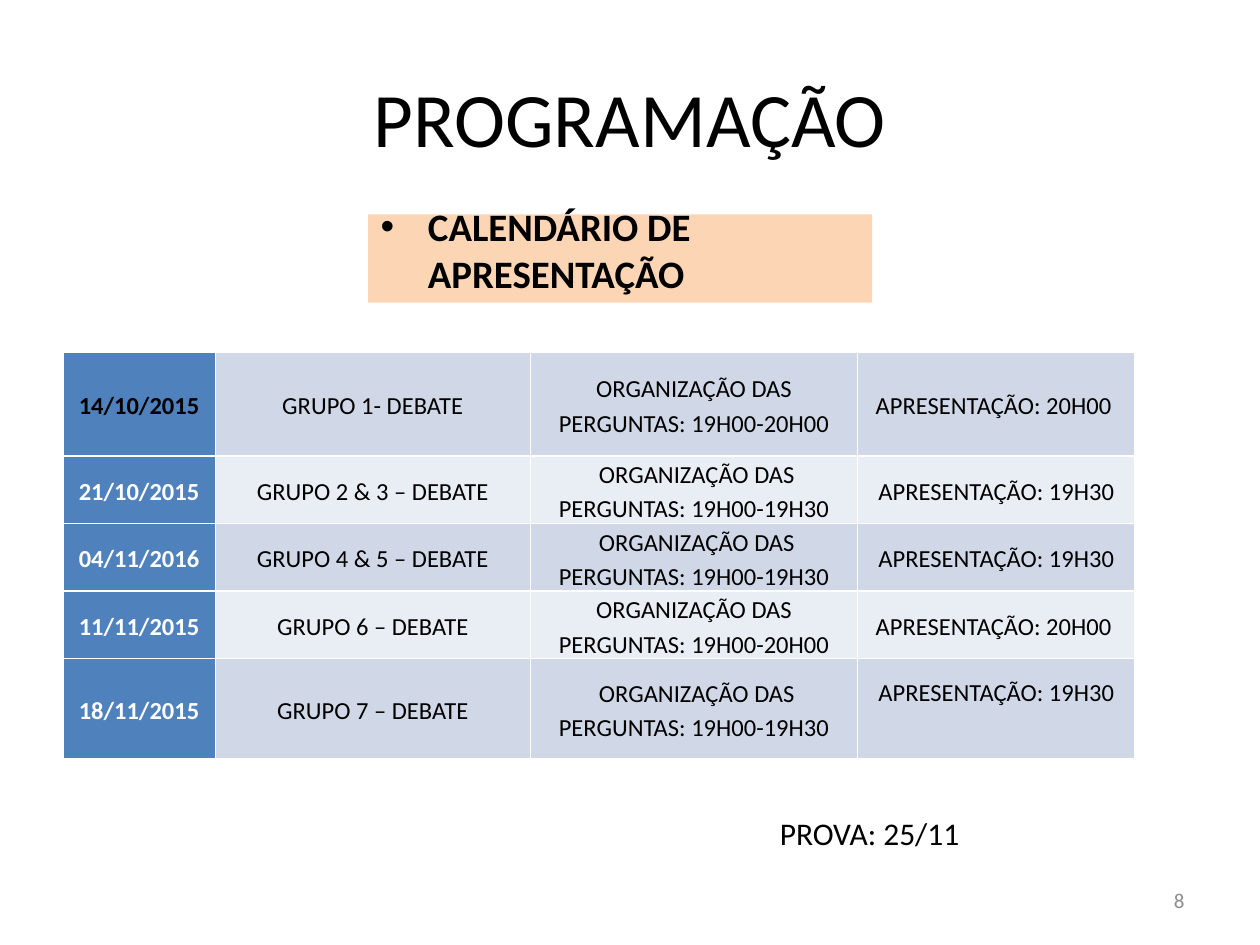
from dataclasses import dataclass
from lxml.etree import SubElement
from pptx import Presentation
from pptx.dml.color import RGBColor
from pptx.enum.text import MSO_ANCHOR, MSO_AUTO_SIZE, PP_ALIGN
from pptx.oxml.ns import qn
from pptx.util import Cm, Pt


@dataclass(frozen=True)
class Theme:
    face: str = "Calibri"
    ink: str = "000000"
    white: str = "FFFFFF"
    gray: str = "8C8C8C"
    peach: str = "FCD5B5"
    blue: str = "4F81BD"
    bands: tuple = ("D0D8E8", "E9EDF4")
    title: float = 44
    head: float = 22.2
    exam: float = 18
    cell: float = 14
    page: float = 12


THEME = Theme()
WIDTHS = (3.07, 6.35, 6.6, 5.59)
HEIGHTS = (2.08, 1.32, 1.32, 1.32, 2.01)
ROWS = (
    ("14/10/2015", "GRUPO 1- DEBATE",
     "ORGANIZAÇÃO DAS PERGUNTAS: 19H00-20H00", "APRESENTAÇÃO: 20H00 "),
    ("21/10/2015", "GRUPO 2 & 3 – DEBATE",
     " ORGANIZAÇÃO DAS PERGUNTAS: 19H00-19H30", "APRESENTAÇÃO: 19H30"),
    ("04/11/2016", "GRUPO 4 & 5 – DEBATE",
     " ORGANIZAÇÃO DAS PERGUNTAS: 19H00-19H30", "APRESENTAÇÃO: 19H30"),
    ("11/11/2015", "GRUPO 6 – DEBATE",
     "ORGANIZAÇÃO DAS PERGUNTAS: 19H00-20H00", "APRESENTAÇÃO: 20H00 "),
    ("18/11/2015", "GRUPO 7 – DEBATE",
     " ORGANIZAÇÃO DAS PERGUNTAS: 19H00-19H30", "APRESENTAÇÃO: 19H30"),
)


def paint(fill, color):
    fill.solid()
    fill.fore_color.rgb = RGBColor.from_string(color)


def write(frame, text, size, color=THEME.ink, bold=False, align=PP_ALIGN.LEFT):
    frame.text = text
    para = frame.paragraphs[0]
    para.alignment = align
    font = para.font
    font.name, font.size, font.bold = THEME.face, Pt(size), bold
    font.color.rgb = RGBColor.from_string(color)
    return para


def place(shape, box):
    shape.left, shape.top, shape.width, shape.height = map(Cm, box)


def add_title(slide, box):
    title = slide.shapes.title
    place(title, box)
    title.text_frame.vertical_anchor = MSO_ANCHOR.MIDDLE
    write(title.text_frame, "PROGRAMAÇÃO", THEME.title, align=PP_ALIGN.CENTER)


def add_head(slide, box):
    head = slide.placeholders[1]
    place(head, box)
    paint(head.fill, THEME.peach)
    frame = head.text_frame
    frame.auto_size = MSO_AUTO_SIZE.NONE
    frame.vertical_anchor = MSO_ANCHOR.BOTTOM
    frame.text = ""
    # No bullet and no hanging indent
    props = frame.paragraphs[0]._p.get_or_add_pPr()
    props.set("marL", "0")
    props.set("indent", "0")
    SubElement(props, qn("a:buNone"))
    para = write(frame, "CALENDÁRIO DE APRESENTAÇÃO", THEME.head, bold=True)
    para.space_before = Pt(0)


def add_note(slide, box, text, size, wrap=True, **style):
    note = slide.shapes.add_textbox(*map(Cm, box))
    note.text_frame.word_wrap = wrap
    write(note.text_frame, text, size, **style)
    return note.text_frame


def rule_cell(cell):
    props = cell._tc.get_or_add_tcPr()
    for side in ("lnL", "lnR", "lnT", "lnB"):
        line = SubElement(props, qn(f"a:{side}"), w=str(Pt(1)))
        fill = SubElement(line, qn("a:solidFill"))
        SubElement(fill, qn("a:srgbClr"), val=THEME.white)


def add_dates(slide, box):
    table = slide.shapes.add_table(len(ROWS), len(WIDTHS), *map(Cm, box)).table
    for column, width in zip(table.columns, WIDTHS):
        column.width = Cm(width)
    for r, (row, texts) in enumerate(zip(table.rows, ROWS)):
        row.height = Cm(HEIGHTS[r])
        for c, (cell, text) in enumerate(zip(row.cells, texts)):
            first = c == 0
            rule_cell(cell)
            paint(cell.fill, THEME.blue if first else THEME.bands[r % 2])
            cell.vertical_anchor = MSO_ANCHOR.MIDDLE
            cell.margin_left = cell.margin_right = Cm(0.13)
            cell.margin_top = cell.margin_bottom = 0
            color = THEME.white if first and r else THEME.ink
            para = write(cell.text_frame, text, THEME.cell, color, first,
                         PP_ALIGN.CENTER)
            para.line_spacing = 1.15
    # The last time sits one line higher in its row
    cell.margin_bottom = Cm(0.7)


def main():
    deck = Presentation()
    deck.slide_width, deck.slide_height = Cm(25.4), Cm(19.05)
    slide = deck.slides.add_slide(deck.slide_layouts[1])
    add_title(slide, (1.27, 0.76, 22.86, 3.18))
    add_head(slide, (7.42, 4.32, 10.16, 1.78))
    # Page number and exam date
    page = add_note(slide, (18.2, 17.65, 5.93, 1.01), "8", THEME.page,
                    color=THEME.gray, align=PP_ALIGN.RIGHT)
    page.vertical_anchor = MSO_ANCHOR.MIDDLE
    exam = add_note(slide, (15.47, 16.28, 4.17, 1.02), "PROVA: 25/11",
                    THEME.exam, wrap=False)
    exam.auto_size = MSO_AUTO_SIZE.SHAPE_TO_FIT_TEXT
    add_dates(slide, (1.27, 7.11, sum(WIDTHS), sum(HEIGHTS)))
    deck.save("out.pptx")


if __name__ == "__main__":
    main()
